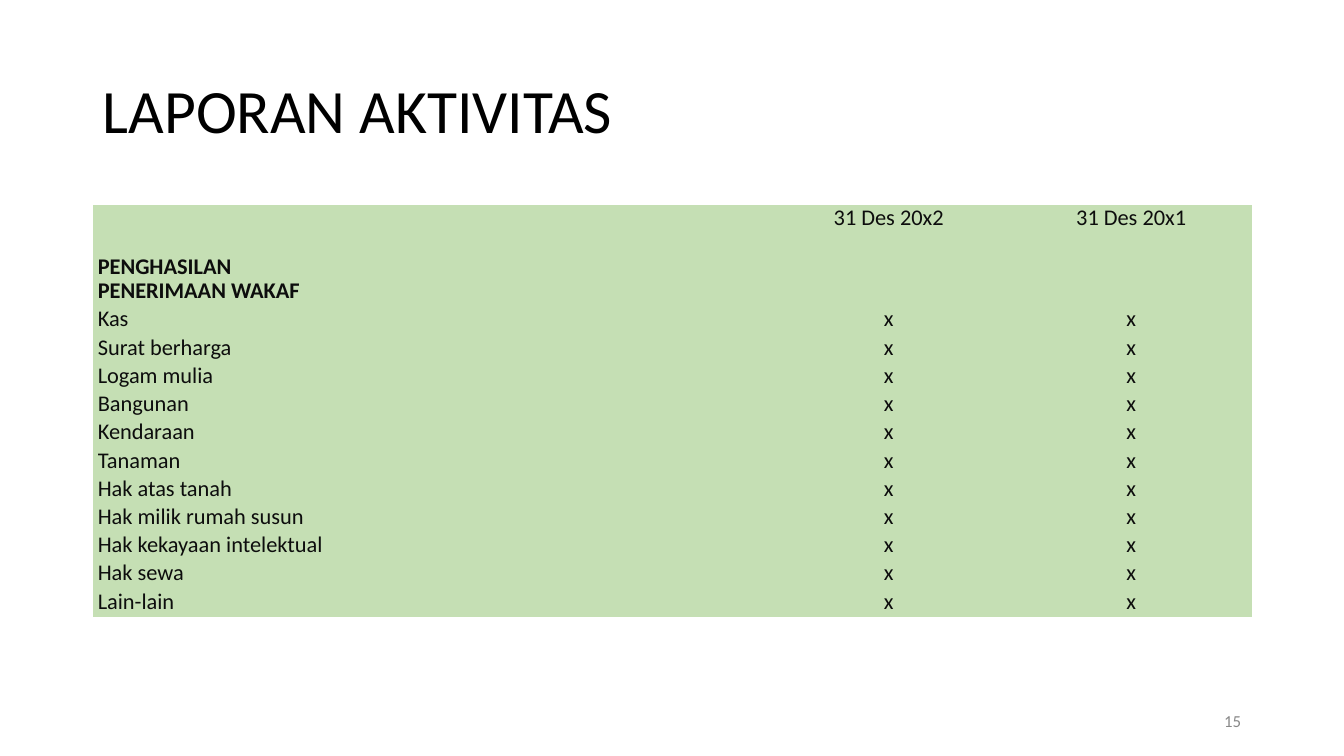
import pptx
import pptx.util
import pptx.dml.color
import pptx.enum.text

Inches, Pt = pptx.util.Inches, pptx.util.Pt
ALIGN = pptx.enum.text.PP_ALIGN
ANCHOR = pptx.enum.text.MSO_ANCHOR

COLORS = {"title": "000000", "text": "0D0D0D", "band": "C5DFB4", "number": "888888"}
NO_STYLE = "{2D5ABB26-0587-4C30-8999-92F81FD0307C}"
DATES = ["31 Des 20x2", "31 Des 20x1"]
HEADINGS = ["PENGHASILAN", "PENERIMAAN WAKAF"]
ITEMS = ["Kas", "Surat berharga", "Logam mulia", "Bangunan", "Kendaraan", "Tanaman",
         "Hak atas tanah", "Hak milik rumah susun", "Hak kekayaan intelektual",
         "Hak sewa", "Lain-lain"]


def rgb(name):
    return pptx.dml.color.RGBColor.from_string(COLORS[name])


def set_font(p, size, color, bold=False):
    p.font.name = "Calibri"
    p.font.size = Pt(size)
    p.font.bold = bold
    p.font.color.rgb = rgb(color)


def set_margins(box, left=0, top=0):
    box.margin_left, box.margin_top = Inches(left), Inches(top)
    box.margin_right = box.margin_bottom = 0


def add_title(slide, x, y, w, h):
    sp = slide.shapes.title
    sp.left, sp.top, sp.width, sp.height = map(Inches, (x, y, w, h))
    tf = sp.text_frame
    tf.text = "LAPORAN AKTIVITAS"
    tf.vertical_anchor = ANCHOR.MIDDLE
    p = tf.paragraphs[0]
    p.alignment = ALIGN.LEFT
    p.line_spacing = 0.9
    set_font(p, 44, "title")


def add_report(slide, x, y, w, h):
    rows = [["", *DATES]]
    rows += [[heading, "", ""] for heading in HEADINGS]
    rows += [[item, "x", "x"] for item in ITEMS]
    frame = slide.shapes.add_table(len(rows), 3, *map(Inches, (x, y, w, h)))
    table = frame.table
    table.first_row = table.horz_banding = False
    table._tbl.tblPr.find(pptx.oxml.ns.qn("a:tableStyleId")).text = NO_STYLE

    # Column widths and row heights
    for column, width in zip(table.columns, (5.07, 4.03, w - 9.1)):
        column.width = Inches(width)
    heights = [0.38, 0.36] + [0.28] * (len(rows) - 3) + [0.26]
    for row, height in zip(table.rows, heights):
        row.height = Inches(height)

    # Cells: labels on the left, dates and amounts centred
    for r, values in enumerate(rows):
        for c, value in enumerate(values):
            cell = table.cell(r, c)
            cell.fill.solid()
            cell.fill.fore_color.rgb = rgb("band")
            set_margins(cell, (0.05, 1.62, 0)[c], 0.1 if r == 1 and c == 0 else 0)
            cell.text = value
            p = cell.text_frame.paragraphs[0]
            p.alignment = ALIGN.CENTER if c else ALIGN.LEFT
            if r > 1:
                p.line_spacing = Pt(17.4)
            set_font(p, 16, "text", bold=value in HEADINGS)


def add_page_number(slide, x, y, w, h):
    sp = slide.shapes.add_textbox(*map(Inches, (x, y, w, h)))
    tf = sp.text_frame
    set_margins(tf, 0.04)
    tf.word_wrap = True
    tf.vertical_anchor = ANCHOR.MIDDLE
    tf.text = "15"
    p = tf.paragraphs[0]
    p.line_spacing = Pt(12.4)
    set_font(p, 12, "number")


def main():
    prs = pptx.Presentation()
    prs.slide_width, prs.slide_height = Inches(13.33), Inches(7.5)
    slide = prs.slides.add_slide(prs.slide_layouts[5])
    add_title(slide, 0.92, 0.4, 11.5, 1.45)
    add_report(slide, 0.92, 2.03, 11.5, 4.11)
    add_page_number(slide, 12.1, 7.07, 0.25, 0.19)
    prs.save("out.pptx")


if __name__ == "__main__":
    main()
